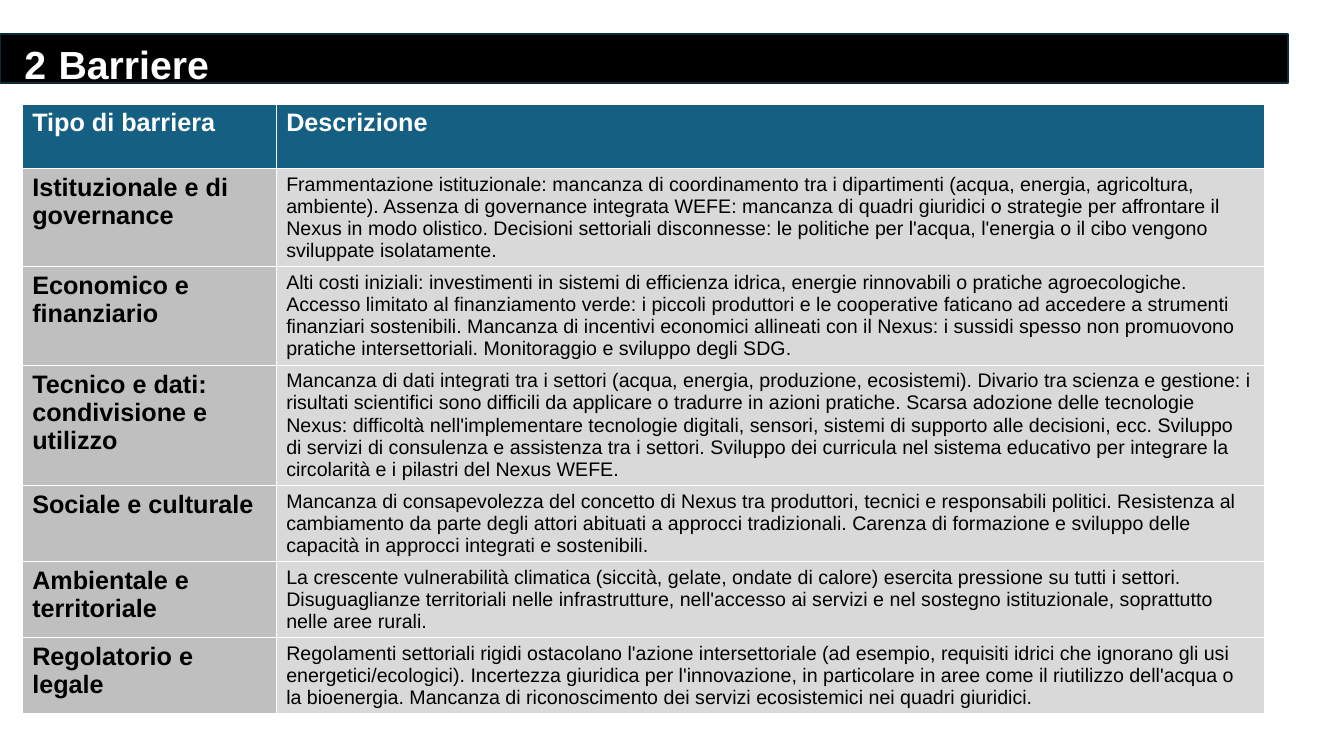
from dataclasses import dataclass

from pptx import Presentation
from pptx.dml.color import RGBColor
from pptx.enum.shapes import MSO_SHAPE
from pptx.enum.text import MSO_ANCHOR, PP_ALIGN
from pptx.util import Cm, Pt

RECT = MSO_SHAPE.RECTANGLE
TOP = MSO_ANCHOR.TOP
LEFT = PP_ALIGN.LEFT
TITLE_ONLY = 5


@dataclass(frozen=True)
class Theme:
    font: str = "Arial"
    space_font: str = "Roboto"
    white: str = "FFFFFF"
    black: str = "000000"
    bar_line: str = "092A39"
    header: str = "156082"
    kind: str = "BFBFBF"
    detail: str = "D9D9D9"
    title_size: int = 28
    space_size: int = 36
    heading_size: int = 18
    body_size: int = 14


THEME = Theme()

HEADINGS = ("Tipo di barriera", "Descrizione")
BARRIERS = [
    ("Istituzionale e di governance",
     "Frammentazione istituzionale: mancanza di coordinamento tra i dipartimenti "
     "(acqua, energia, agricoltura, ambiente). Assenza di governance integrata WEFE: "
     "mancanza di quadri giuridici o strategie per affrontare il Nexus in modo olistico. "
     "Decisioni settoriali disconnesse: le politiche per l'acqua, l'energia o il cibo "
     "vengono sviluppate isolatamente."),
    ("Economico e finanziario",
     "Alti costi iniziali: investimenti in sistemi di efficienza idrica, energie "
     "rinnovabili o pratiche agroecologiche. Accesso limitato al finanziamento verde: "
     "i piccoli produttori e le cooperative faticano ad accedere a strumenti finanziari "
     "sostenibili. Mancanza di incentivi economici allineati con il Nexus: i sussidi "
     "spesso non promuovono pratiche intersettoriali. Monitoraggio e sviluppo degli SDG."),
    ("Tecnico e dati: condivisione e utilizzo",
     "Mancanza di dati integrati tra i settori (acqua, energia, produzione, ecosistemi). "
     "Divario tra scienza e gestione: i risultati scientifici sono difficili da applicare "
     "o tradurre in azioni pratiche. Scarsa adozione delle tecnologie Nexus: difficoltà "
     "nell'implementare tecnologie digitali, sensori, sistemi di supporto alle decisioni, "
     "ecc. Sviluppo di servizi di consulenza e assistenza tra i settori. Sviluppo dei "
     "curricula nel sistema educativo per integrare la circolarità e i pilastri del "
     "Nexus WEFE."),
    ("Sociale e culturale",
     "Mancanza di consapevolezza del concetto di Nexus tra produttori, tecnici e "
     "responsabili politici. Resistenza al cambiamento da parte degli attori abituati a "
     "approcci tradizionali. Carenza di formazione e sviluppo delle capacità in approcci "
     "integrati e sostenibili."),
    ("Ambientale e territoriale",
     "La crescente vulnerabilità climatica (siccità, gelate, ondate di calore) esercita "
     "pressione su tutti i settori. Disuguaglianze territoriali nelle infrastrutture, "
     "nell'accesso ai servizi e nel sostegno istituzionale, soprattutto nelle aree rurali."),
    ("Regolatorio e legale",
     "Regolamenti settoriali rigidi ostacolano l'azione intersettoriale (ad esempio, "
     "requisiti idrici che ignorano gli usi energetici/ecologici). Incertezza giuridica "
     "per l'innovazione, in particolare in aree come il riutilizzo dell'acqua o la "
     "bioenergia. Mancanza di riconoscimento dei servizi ecosistemici nei quadri giuridici."),
]


def add_text(p, text, *, size, color=THEME.black, bold=False, font=THEME.font):
    r = p.add_run()
    r.text = text
    r.font.name = font
    r.font.size = Pt(size)
    r.font.bold = bold
    r.font.color.rgb = RGBColor.from_string(color)


def paint(fill, color):
    fill.solid()
    fill.fore_color.rgb = RGBColor.from_string(color)


def add_title_bar(slide):
    sp = slide.shapes.add_shape(RECT, Cm(0), Cm(0.86), Cm(32.46), Cm(1.24))
    sp.shadow.inherit = False
    paint(sp.fill, THEME.black)
    sp.line.color.rgb = RGBColor.from_string(THEME.bar_line)
    sp.line.width = Pt(1.5)
    slide.shapes.title.element.addprevious(sp.element)


def set_title(slide, number, text):
    sp = slide.shapes.title
    sp.left, sp.top, sp.width, sp.height = Cm(0.36), Cm(0.61), Cm(25.48), Cm(1.75)
    tf = sp.text_frame
    tf.vertical_anchor = TOP
    p = tf.paragraphs[0]
    p.alignment = LEFT
    style = {"size": THEME.title_size, "color": THEME.white, "bold": True}
    add_text(p, number, **style)
    add_text(p, " ", size=THEME.space_size, color=THEME.header, font=THEME.space_font)
    add_text(p, text, **style)


def fill_row(row, texts, fills, styles):
    row.height = Cm(1.63)
    for cell, text, fill, style in zip(row.cells, texts, fills, styles):
        paint(cell.fill, fill)
        add_text(cell.text_frame.paragraphs[0], text, **style)


def add_barrier_table(slide):
    widths = (Cm(6.4), Cm(24.9))
    count = len(BARRIERS) + 1
    table = slide.shapes.add_table(
        count, len(widths), Cm(0.56), Cm(2.62), sum(widths), Cm(1.63) * count).table
    for column, width in zip(table.columns, widths):
        column.width = width
    header = {"size": THEME.heading_size, "color": THEME.white, "bold": True}
    kind = {"size": THEME.heading_size, "bold": True}
    detail = {"size": THEME.body_size}
    rows = list(table.rows)
    fill_row(rows[0], HEADINGS, (THEME.header, THEME.header), (header, header))
    for row, barrier in zip(rows[1:], BARRIERS):
        fill_row(row, barrier, (THEME.kind, THEME.detail), (kind, detail))


def main():
    prs = Presentation()
    prs.slide_width, prs.slide_height = Cm(33.87), Cm(19.05)
    slide = prs.slides.add_slide(prs.slide_layouts[TITLE_ONLY])
    add_title_bar(slide)
    set_title(slide, "2", "Barriere")
    add_barrier_table(slide)
    prs.save("out.pptx")


if __name__ == "__main__":
    main()
